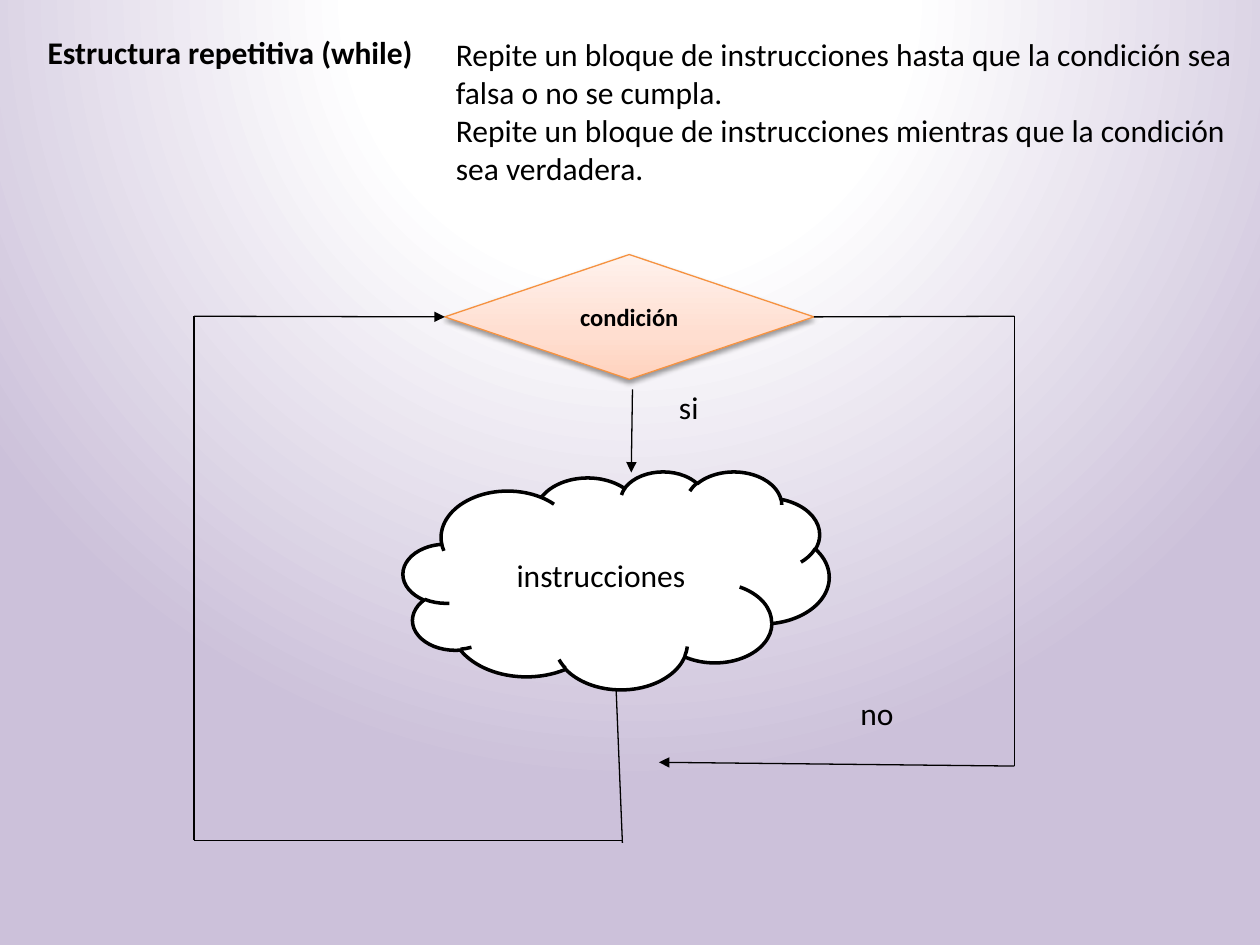
from lxml import etree
from pptx import Presentation
from pptx.dml.color import RGBColor
from pptx.enum.shapes import MSO_CONNECTOR, MSO_SHAPE
from pptx.enum.text import MSO_ANCHOR, MSO_AUTO_SIZE, PP_ALIGN
from pptx.oxml import parse_xml
from pptx.oxml.ns import nsdecls, qn
from pptx.util import Inches, Pt

STRAIGHT = MSO_CONNECTOR.STRAIGHT
DIAMOND, CLOUD = MSO_SHAPE.DIAMOND, MSO_SHAPE.CLOUD
MIDDLE, CENTER = MSO_ANCHOR.MIDDLE, PP_ALIGN.CENTER
GROW = MSO_AUTO_SIZE.SHAPE_TO_FIT_TEXT
LEFT_SIDE, RIGHT_SIDE = 1, 3

COLORS = {
    "black": "000000", "white": "FFFFFF", "lilac": "CCC1DA", "orange": "F69240",
    "peach": "FFD2BD", "peach_mid": "FFDED0", "peach_light": "FFF2ED",
}


def rgb(name):
    return RGBColor.from_string(COLORS[name])


def gradient(stops, direction):
    gs = "".join(f'<a:gs pos="{pos * 1000}"><a:srgbClr val="{COLORS[c]}"/></a:gs>'
                 for pos, c in stops)
    return (f'<a:gradFill {nsdecls("a")} rotWithShape="1">'
            f'<a:gsLst>{gs}</a:gsLst>{direction}</a:gradFill>')


def set_background(s):
    fill = gradient([(0, "white"), (35, "white"), (100, "lilac")],
                    '<a:path path="circle"><a:fillToRect l="50000" t="-80000" '
                    'r="50000" b="180000"/></a:path>')
    s.element.cSld.insert(0, parse_xml(
        f'<p:bg {nsdecls("p", "a")}><p:bgPr>{fill}<a:effectLst/></p:bgPr></p:bg>'))


def write(tf, lines, **fmt):
    font = {"name": "Calibri", "size": Pt(18), "bold": False, **fmt}
    for i, line in enumerate(lines):
        p = tf.paragraphs[0] if i == 0 else tf.add_paragraph()
        r = p.add_run()
        r.text = line
        for key, value in font.items():
            setattr(r.font, key, value)
        r.font.color.rgb = rgb("black")


def add_text(s, box, lines, wrap=False, **fmt):
    tf = s.shapes.add_textbox(*map(Inches, box)).text_frame
    tf.word_wrap = wrap
    tf.auto_size = GROW
    write(tf, lines, **fmt)


def add_node(s, kind, box, text, line, width, **fmt):
    sp = s.shapes.add_shape(kind, *map(Inches, box))
    sp.shadow.inherit = False
    sp.fill.solid()
    sp.fill.fore_color.rgb = rgb("white")
    sp.line.color.rgb = rgb(line)
    sp.line.width = Pt(width)
    tf = sp.text_frame
    tf.vertical_anchor = MIDDLE
    write(tf, [text], **fmt)
    tf.paragraphs[0].alignment = CENTER
    return sp


def style_condition(sp):
    spPr = sp.element.spPr
    fill = gradient([(0, "peach"), (35, "peach_mid"), (100, "peach_light")],
                    '<a:lin ang="16200000" scaled="1"/>')
    spPr.replace(spPr.find(qn("a:solidFill")), parse_xml(fill))
    spPr.find(qn("a:effectLst")).append(parse_xml(
        f'<a:outerShdw {nsdecls("a")} blurRad="{Pt(3.1)}" dist="{Pt(1.6)}" '
        f'dir="5400000" rotWithShape="0"><a:srgbClr val="{COLORS["black"]}">'
        '<a:alpha val="38000"/></a:srgbClr></a:outerShdw>'))


def add_line(s, start, end, arrow=False):
    c = s.shapes.add_connector(STRAIGHT, *map(Inches, start + end))
    c.line.color.rgb = rgb("black")
    c.line.width = Pt(0.75)
    if arrow:
        etree.SubElement(c.line._get_or_add_ln(), qn("a:tailEnd"), type="triangle")
    etree.SubElement(c._element.spPr, qn("a:effectLst"))
    return c


def main():
    prs = Presentation()
    prs.slide_width, prs.slide_height = Inches(10), Inches(7.5)
    s = prs.slides.add_slide(prs.slide_layouts[6])
    set_background(s)

    condition = add_node(s, DIAMOND, (3.53, 2.02, 2.93, 0.99), "condición",
                         "orange", 0.75, size=Pt(14), bold=True)
    style_condition(condition)

    left, right, top, bottom, exit_y = 1.54, 8.05, 2.51, 6.67, 6.08
    add_line(s, (5.02, 3.09), (5.01, 3.75), arrow=True)
    loop_back = add_line(s, (left, top), (3.53, top), arrow=True)
    loop_back.end_connect(condition, LEFT_SIDE)
    add_line(s, (left, bottom), (left, top))
    add_line(s, (left, bottom), (4.94, bottom))
    add_line(s, (4.94, 6.69), (4.89, 5.47))
    add_line(s, (right, exit_y), (5.23, 6.05), arrow=True)
    add_line(s, (right, top), (right, exit_y))
    leave = add_line(s, (right, top), (6.45, top))
    leave.end_connect(condition, RIGHT_SIDE)

    add_node(s, CLOUD, (3.2, 3.74, 3.38, 1.73), "instrucciones", "black", 2)
    add_text(s, (6.73, 5.46, 0.67, 0.59), ["no"])
    add_text(s, (5.29, 3.03, 0.51, 0.59), ["si"])
    add_text(s, (0.28, 0.21, 3.13, 0.4), ["Estructura repetitiva (while)"], bold=True)
    add_text(s, (3.52, 0.23, 6.57, 1.31), [
        "Repite un bloque de instrucciones hasta que la condición sea falsa o no se cumpla.",
        "Repite un bloque de instrucciones mientras que la condición sea verdadera.",
    ], wrap=True)
    prs.save("out.pptx")


if __name__ == "__main__":
    main()
